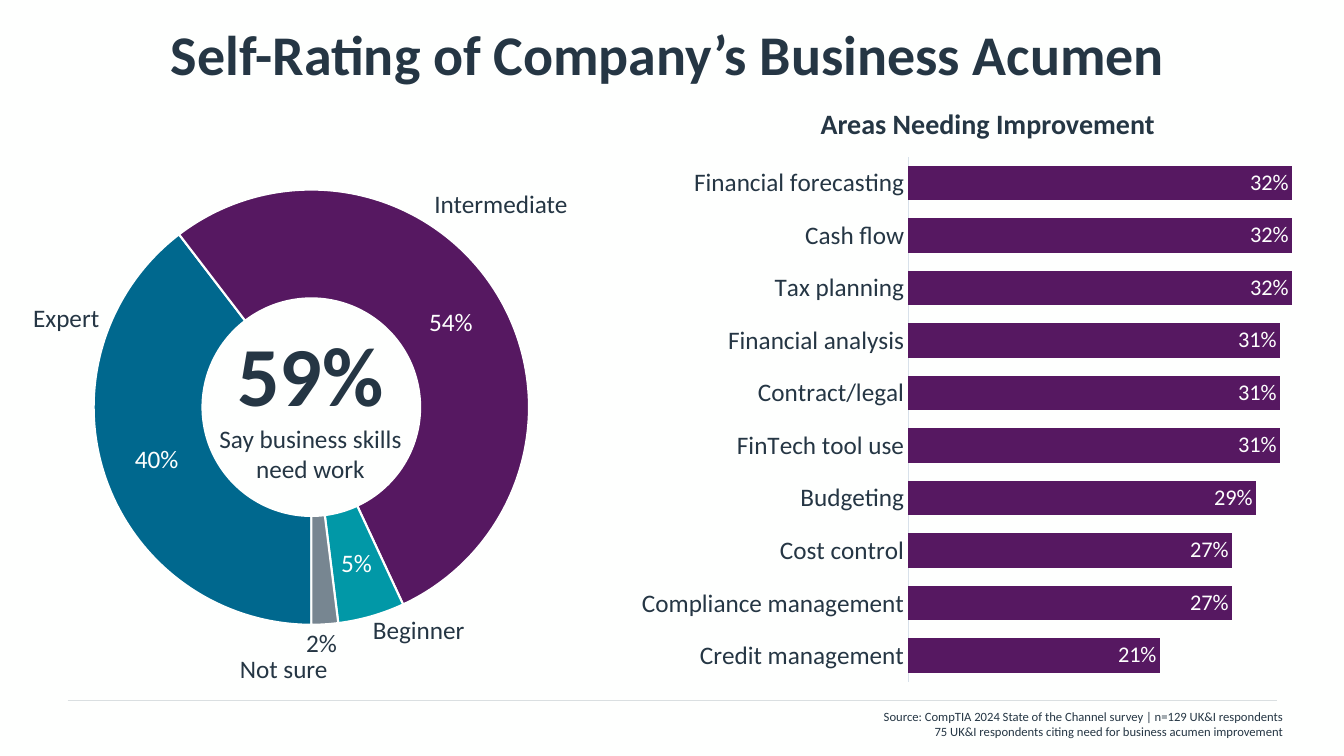
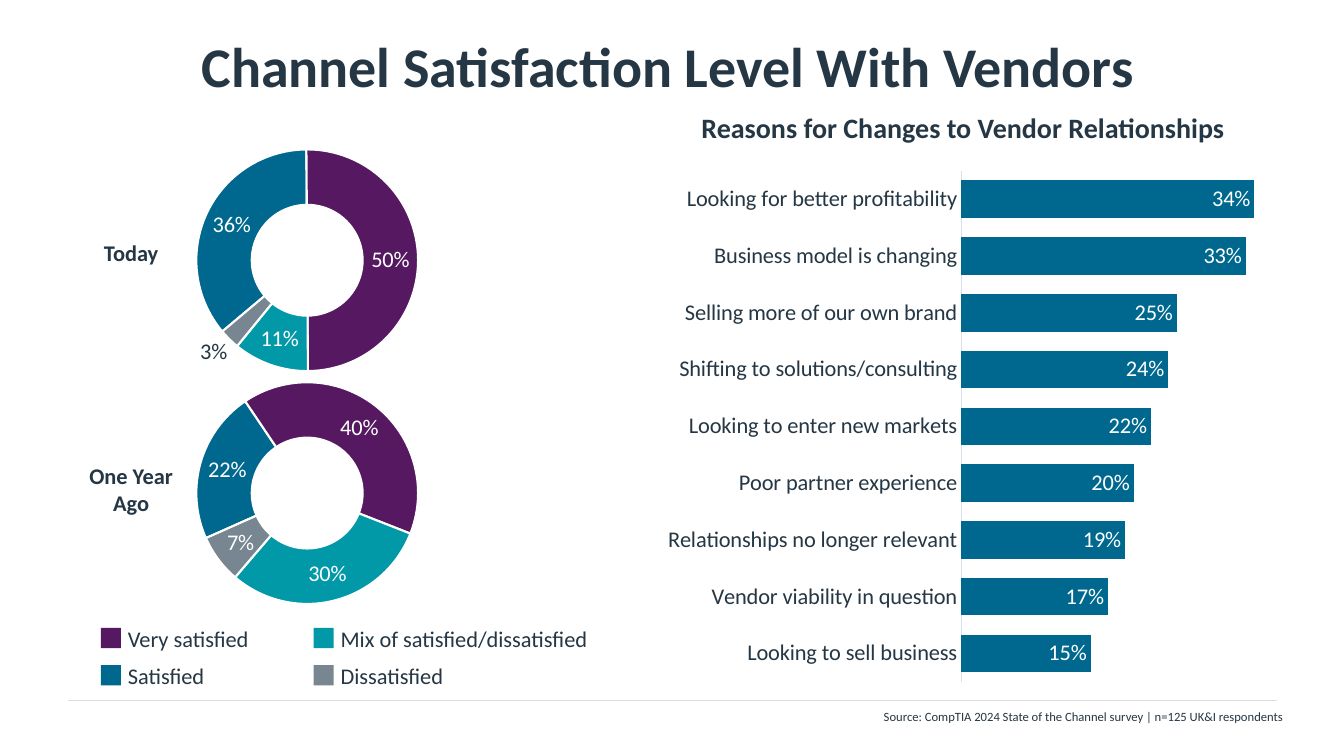
from lxml import etree
from pptx import Presentation
from pptx.chart.data import CategoryChartData
from pptx.dml.color import RGBColor
from pptx.enum import chart as ch, shapes, text
from pptx.oxml import ns
from pptx.util import Inches, Pt

INK = RGBColor(0x25, 0x36, 0x44)
PAPER = RGBColor(0xFE, 0xFF, 0xFE)
RULE = RGBColor(0xDA, 0xDF, 0xE1)
AXIS = RGBColor(0xD8, 0xE1, 0xEA)
PLUM = RGBColor(0x56, 0x18, 0x61)
BLUE = RGBColor(0x00, 0x68, 0x8E)
TEAL = RGBColor(0x01, 0x98, 0xA7)
GREY = RGBColor(0x77, 0x86, 0x91)
FACE = "Calibri"
LEFT, MID, RIGHT = text.PP_ALIGN.LEFT, text.PP_ALIGN.CENTER, text.PP_ALIGN.RIGHT
SNUG = (0, 0.05, 0.1, 0.05)
PAD = (0.1, 0.05, 0.1, 0.05)


def style(font, size, color=INK, bold=False):
    font.name = FACE
    font.size = Pt(size)
    font.bold = bold
    font.color.rgb = color


def add_text(slide, at, lines, align=LEFT, wrap=True, inset=PAD, middle=False):
    frame = slide.shapes.add_textbox(*map(Inches, at)).text_frame
    frame.word_wrap = wrap
    frame.margin_left, frame.margin_top, frame.margin_right, frame.margin_bottom = map(Inches, inset)
    if middle:
        frame.vertical_anchor = text.MSO_ANCHOR.MIDDLE
    for i, (words, size, bold) in enumerate(lines):
        para = frame.add_paragraph() if i else frame.paragraphs[0]
        para.text = words
        para.alignment = align
        style(para.font, size, bold=bold)


def add_tag(slide, at, words, size, bold=False):
    add_text(slide, at, [(words, size, bold)], wrap=False)


def add_head(slide, at, words, size):
    add_text(slide, at, [(words, size, True)], MID, inset=SNUG, middle=True)


def add_slide(deck, title, top, notes):
    slide = deck.slides.add_slide(deck.slide_layouts[6])
    fill = slide.background.fill
    fill.solid()
    fill.fore_color.rgb = PAPER
    rule = slide.shapes.add_connector(
        shapes.MSO_CONNECTOR.STRAIGHT, Inches(0.67), Inches(6.95), Inches(12.67), Inches(6.95))
    rule.line.color.rgb = RULE
    rule.line.width = Pt(0.5)
    etree.SubElement(rule._element.spPr, ns.qn("a:effectLst"))
    add_head(slide, (0.67, top, 12, 1.25), title, 40)
    add_text(slide, (6.33, 6.98, 6.49, 0.4), [(note, 9, False) for note in notes], RIGHT)
    return slide


def make_layout(**parts):
    layout = etree.Element(ns.qn("c:layout"))
    manual = etree.SubElement(layout, ns.qn("c:manualLayout"))
    for key, value in parts.items():
        etree.SubElement(manual, ns.qn("c:" + key)).set("val", str(value))
    return layout


def add_chart(slide, kind, at, names, vals, plot, size):
    data = CategoryChartData(number_format="0%")
    data.categories = names
    data.add_series("Series 1", vals)
    chart = slide.shapes.add_chart(kind, *map(Inches, at), data).chart
    chart.has_legend = False
    chart.has_title = False
    style(chart.font, 11)
    area = chart._chartSpace.chart.plotArea
    for old in area.findall(ns.qn("c:layout")):
        area.remove(old)
    x, y, w, h = plot
    area.insert(0, make_layout(
        layoutTarget="inner", xMode="edge", yMode="edge", x=x, y=y, w=w, h=h))
    chart.plots[0].vary_by_categories = False
    series = chart.plots[0].series[0]
    labels = series.data_labels
    labels.show_value = True
    labels.number_format = "0%"
    labels.number_format_is_linked = False
    style(labels.font, size, PAPER)
    return chart, series


def move_label(series, spot, shift, size):
    style(series.points[spot].data_label.font, size)
    index = series._element.xpath("c:dLbls/c:dLbl/c:idx")[0]
    form = etree.Element(ns.qn("c:numFmt"), formatCode="0%", sourceLinked="0")
    index.addnext(form)
    index.addnext(make_layout(x=shift[0], y=shift[1]))


def add_ring(slide, at, vals, start, plot, size, shift=None):
    chart, series = add_chart(
        slide, ch.XL_CHART_TYPE.DOUGHNUT, at, ["1", "2", "3", "4"], vals, plot, size)
    chart.plots[0].vary_by_categories = True
    space = chart._chartSpace
    for tag, value in (("firstSliceAng", start), ("holeSize", 50), ("showLeaderLines", 0)):
        for node in space.iter(ns.qn("c:" + tag)):
            node.set("val", str(value))
    for i, color in enumerate((BLUE, PLUM, TEAL, GREY)):
        look = series.points[i].format
        look.fill.solid()
        look.fill.fore_color.rgb = color
        look.line.color.rgb = PAPER
        look.line.width = Pt(1.5)
    if shift:
        move_label(series, 3, shift, size)


def add_bars(slide, at, rows, top, plot, color, size):
    names, vals = zip(*reversed(rows))
    chart, series = add_chart(
        slide, ch.XL_CHART_TYPE.BAR_CLUSTERED, at, names, vals, plot, 16)
    chart.plots[0].gap_width = 51
    series.format.fill.solid()
    series.format.fill.fore_color.rgb = color
    series.data_labels.position = ch.XL_LABEL_POSITION.INSIDE_END
    scale = chart.value_axis
    scale.minimum_scale, scale.maximum_scale = 0, top
    scale.has_major_gridlines = False
    scale.visible = False
    axis = chart.category_axis
    axis.major_tick_mark = axis.minor_tick_mark = ch.XL_TICK_MARK.NONE
    axis.format.line.color.rgb = AXIS
    axis.format.line.width = Pt(0.75)
    style(axis.tick_labels.font, size)


def add_key(slide, left, top, color, words, width):
    mark = slide.shapes.add_shape(
        shapes.MSO_SHAPE.RECTANGLE, *map(Inches, (left, top, 0.2, 0.2)))
    mark.shadow.inherit = False
    mark.fill.solid()
    mark.fill.fore_color.rgb = color
    mark.line.fill.background()
    add_tag(slide, (left + 0.17, top - 0.08, width, 0.37), words, 16)


def build_rating(deck):
    slide = add_slide(deck, "Self-Rating of Company’s Business Acumen", -0.1, [
        "Source: CompTIA 2024 State of the Channel survey | n=129 UK&I respondents",
        "75 UK&I respondents citing need for business acumen improvement"])
    add_ring(slide, (0.67, 1.71, 4.89, 4.89), (0.4, 0.54, 0.05, 0.02), 180,
             (0.053, 0.035, 0.883, 0.883), 18, (0, 0.15))
    add_text(slide, (1.95, 3.15, 2.26, 1.72),
             [("59%", 60, True), ("Say business skills need work", 18, False)], MID)
    add_bars(slide, (6.02, 1.55, 7.18, 5.22), [
        ("Financial forecasting", 0.32),
        ("Cash flow", 0.32),
        ("Tax planning", 0.32),
        ("Financial analysis", 0.31),
        ("Contract/legal", 0.31),
        ("FinTech tool use", 0.31),
        ("Budgeting", 0.29),
        ("Cost control", 0.27),
        ("Compliance management", 0.27),
        ("Credit management", 0.21),
    ], 0.34, (0.416, 0, 0.564, 1), PLUM, 18)
    for left, top, width, words in (
            (4.21, 1.82, 1.54, "Intermediate"),
            (0.23, 2.95, 0.86, "Expert"),
            (3.6, 6.05, 1.12, "Beginner"),
            (2.28, 6.43, 1.08, "Not sure")):
        add_tag(slide, (left, top, width, 0.4), words, 18)
    add_tag(slide, (8.04, 1.01, 3.55, 0.44), "Areas Needing Improvement", 20, True)


def build_vendors(deck):
    slide = add_slide(deck, "Channel Satisfaction Level With Vendors", 0.02, [
        "Source: CompTIA 2024 State of the Channel survey | n=125 UK&I respondents"])
    plot = (0.088, 0.037, 0.822, 0.88)
    add_ring(slide, (1.71, 1.39, 2.68, 2.5), (0.36, 0.5, 0.11, 0.03), 230,
             plot, 16, (-0.13, 0.13))
    add_ring(slide, (1.71, 3.7, 2.68, 2.5), (0.22, 0.4, 0.3, 0.07), 246, plot, 16)
    add_head(slide, (0.88, 2.31, 0.94, 0.4), "Today", 16)
    add_head(slide, (0.88, 4.65, 0.94, 0.4), "One Year Ago", 16)
    for i, (color, words, width) in enumerate((
            (PLUM, "Very satisfied", 1.42),
            (TEAL, "Mix of satisfied/dissatisfied", 2.68),
            (BLUE, "Satisfied", 0.97),
            (GREY, "Dissatisfied", 1.23))):
        row, col = divmod(i, 2)
        add_key(slide, 1 + 2.11 * col, 6.23 + 0.37 * row, color, words, width)
    add_bars(slide, (5.73, 1.69, 6.93, 5.08), [
        ("Looking for better profitability", 0.34),
        ("Business model is changing", 0.33),
        ("Selling more of our own brand", 0.25),
        ("Shifting to solutions/consulting", 0.24),
        ("Looking to enter new markets", 0.22),
        ("Poor partner experience", 0.2),
        ("Relationships no longer relevant", 0.19),
        ("Vendor viability in question", 0.17),
        ("Looking to sell business", 0.15),
    ], 0.36, (0.549, 0, 0.444, 1), BLUE, 16)
    add_head(slide, (6.53, 1.06, 6.14, 0.4), "Reasons for Changes to Vendor Relationships", 20)


def main():
    deck = Presentation()
    deck.slide_width, deck.slide_height = Inches(13.33), Inches(7.5)
    build_rating(deck)
    build_vendors(deck)
    deck.save("out.pptx")


if __name__ == "__main__":
    main()
